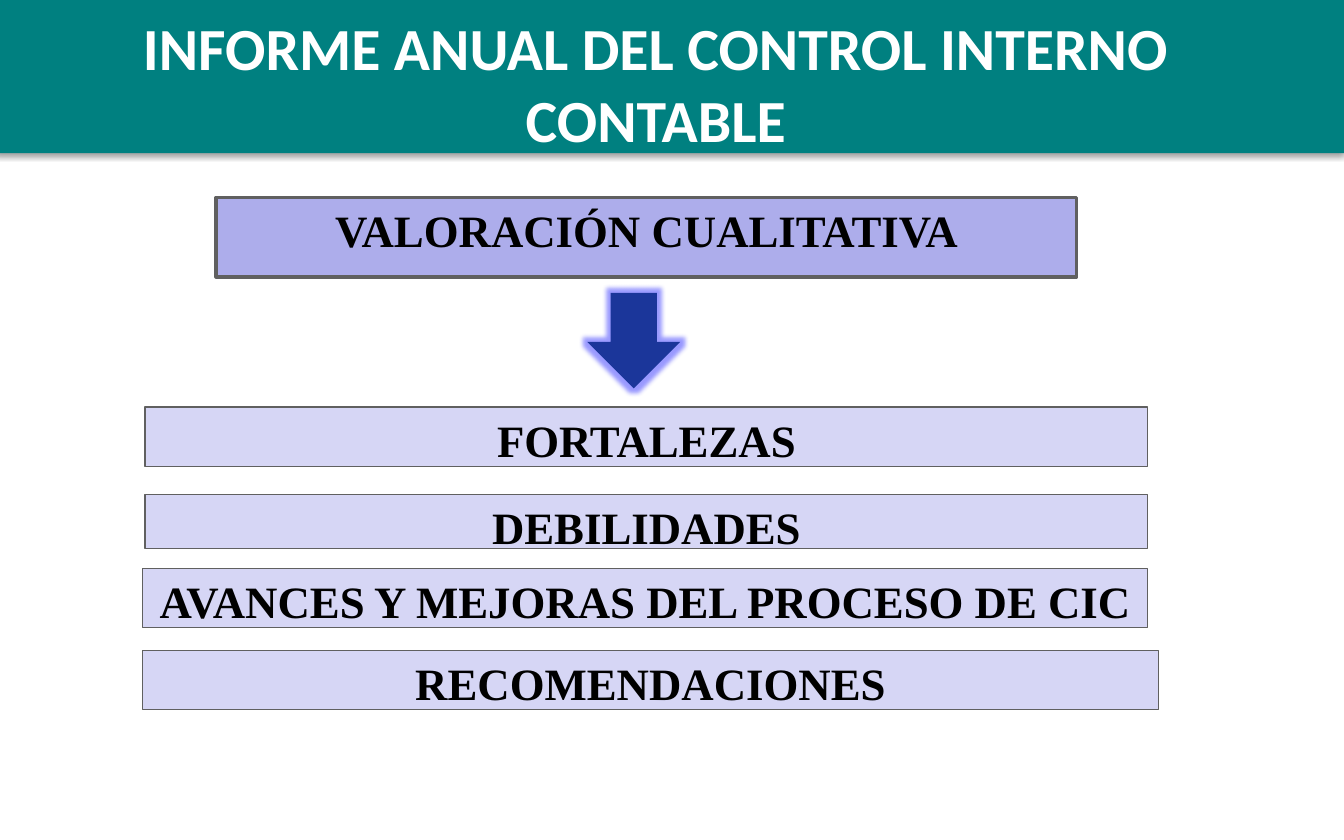
from lxml import etree
from pptx import Presentation
from pptx.dml.color import RGBColor
from pptx.enum import shapes, text
from pptx.oxml.ns import qn
from pptx.util import Inches, Pt

SECTIONS = [
    ("FORTALEZAS", 1.08, 3.03, 7.46, 0.44),
    ("DEBILIDADES", 1.08, 3.68, 7.46, 0.40),
    ("AVANCES Y MEJORAS DEL PROCESO DE CIC", 1.06, 4.23, 7.48, 0.44),
    ("RECOMENDACIONES", 1.06, 4.84, 7.56, 0.44),
]


def rgb(value):
    return RGBColor.from_string(value)


def add_effect(sp, name, color, alpha, **attrs):
    """Give a shape one effect, such as outerShdw or glow."""
    effects = sp._element.spPr.find(qn("a:effectLst"))
    effect = etree.SubElement(effects, qn("a:" + name),
                              {k: str(v) for k, v in attrs.items()})
    clr = etree.SubElement(effect, qn("a:srgbClr"), val=color)
    etree.SubElement(clr, qn("a:alpha"), val=str(alpha * 1000))


def add_shape(s, kind, box, fill, line=None, width=0.75):
    sp = s.shapes.add_shape(kind, *map(Inches, box))
    sp.shadow.inherit = False
    sp.fill.solid()
    sp.fill.fore_color.rgb = rgb(fill)
    if line:
        sp.line.color.rgb = rgb(line)
        sp.line.width = Pt(width)
    else:
        sp.line.fill.background()
    return sp


def set_text(sp, words, size, font, color, top):
    tf = sp.text_frame
    tf.word_wrap = True
    tf.vertical_anchor = text.MSO_ANCHOR.TOP
    tf.margin_top, tf.margin_bottom = Inches(top), 0
    p = tf.paragraphs[0]
    p.text = words
    p.alignment = text.PP_ALIGN.CENTER
    p.font.size = Pt(size)
    p.font.name = font
    p.font.bold = True
    p.font.color.rgb = rgb(color)


def add_box(s, words, box, fill, width=0.75):
    sp = add_shape(s, shapes.MSO_SHAPE.RECTANGLE, box, fill, "606060", width)
    set_text(sp, words, 24, "Times New Roman", "000000", 0.04)


def add_title(s, words):
    bar = add_shape(s, shapes.MSO_SHAPE.RECTANGLE,
                    (-0.04, -0.02, 10.04, 1.16), "008080")
    add_effect(bar, "outerShdw", "000000", 38, blurRad=Pt(3.1), dist=Pt(1.6),
               dir=90 * 60000, rotWithShape=0)
    sp = s.shapes.add_textbox(*map(Inches, (0, 0.03, 9.76, 0.98)))
    set_text(sp, words, 32, "Calibri", "FFFFFF", 0.05)


def add_arrow(s):
    arrow = add_shape(s, shapes.MSO_SHAPE.DOWN_ARROW,
                      (4.37, 2.18, 0.69, 0.71), "1B369A")
    add_effect(arrow, "glow", "3333FF", 50, rad=Pt(5))


def main():
    prs = Presentation()
    prs.slide_width, prs.slide_height = Inches(10), Inches(6.25)
    s = prs.slides.add_slide(prs.slide_layouts[6])
    add_title(s, "INFORME ANUAL DEL CONTROL INTERNO CONTABLE")
    add_box(s, "VALORACIÓN CUALITATIVA", (1.61, 1.47, 6.4, 0.59), "ADADEB", 2)
    for words, *box in SECTIONS:
        add_box(s, words, box, "D6D6F5")
    add_arrow(s)
    prs.save("out.pptx")


if __name__ == "__main__":
    main()
